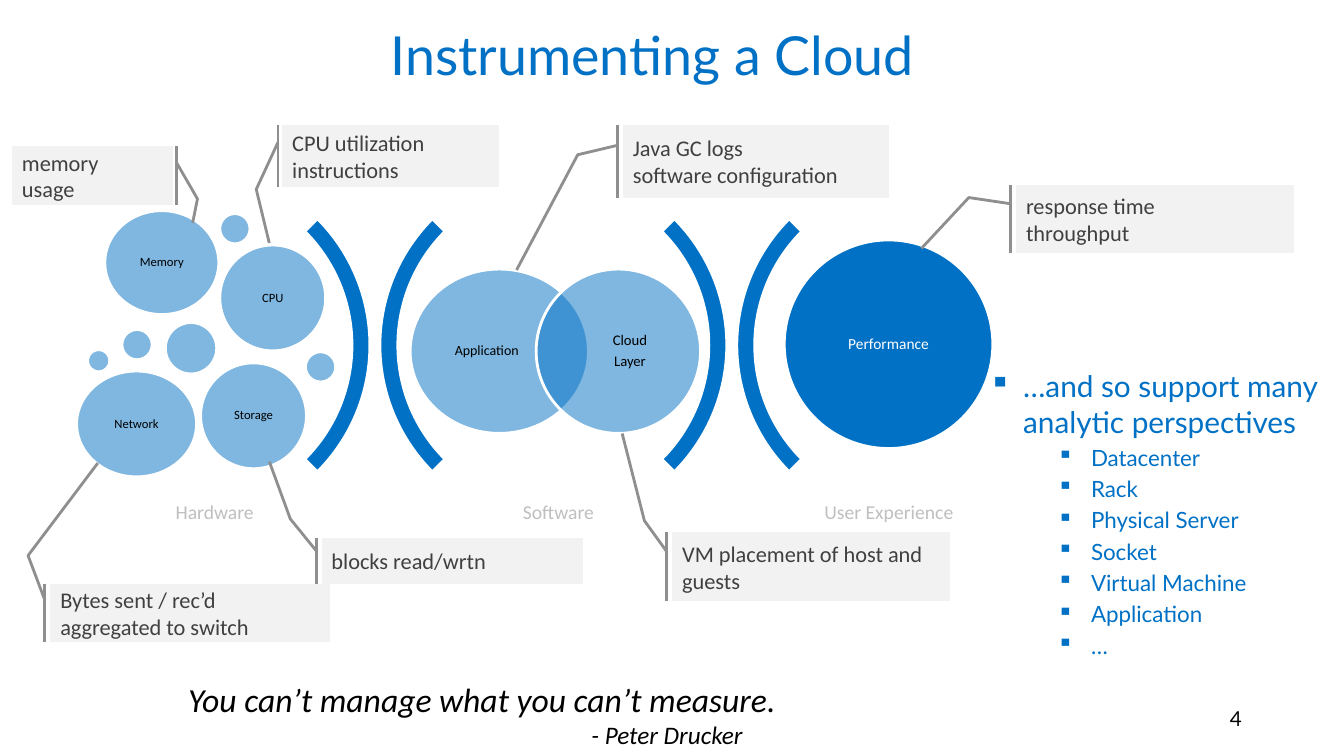
import pptx
import pptx.util
import pptx.dml.color
import pptx.enum.shapes
import pptx.enum.text
import pptx.oxml.ns
import lxml.etree

Pt = pptx.util.Pt
RGB = pptx.dml.color.RGBColor.from_string
SHAPE = pptx.enum.shapes.MSO_SHAPE
ALIGN = pptx.enum.text.PP_ALIGN
ANCHOR = pptx.enum.text.MSO_ANCHOR
qn = pptx.oxml.ns.qn

COLORS = {"blue": "0071C5", "white": "FFFFFF", "black": "000000", "caption": "BFBFBF",
          "panel": "F2F2F2", "leader": "8F8F8F", "note": "404040"}

presentation = pptx.Presentation()
presentation.slide_width, presentation.slide_height = Pt(960), Pt(540)
slide = presentation.slides.add_slide(presentation.slide_layouts[6])


def draw(kind, box, fill, line, alpha=None):
    """Add a preset shape with a flat fill and a 2 pt line."""
    shape = slide.shapes.add_shape(kind, *map(Pt, box))
    shape.shadow.inherit = False
    shape.fill.solid()
    shape.fill.fore_color.rgb = RGB(COLORS[fill])
    shape.line.color.rgb = RGB(COLORS[line])
    shape.line.width = Pt(2)
    if alpha:
        color = shape._element.spPr.find(qn("a:solidFill"))[0]
        lxml.etree.SubElement(color, qn("a:alpha")).set("val", str(alpha * 1000))
    return shape


def write(target, lines, size, color, font="Calibri", anchor=ANCHOR.MIDDLE, inset=None, **layout):
    """Fill a shape, or a new text box at a given place, with paragraphs."""
    shape = target
    if isinstance(target, tuple):
        shape = slide.shapes.add_textbox(*map(Pt, target))
    frame = shape.text_frame
    frame.word_wrap, frame.vertical_anchor = True, anchor
    if inset is not None:
        for side, margin in zip(("left", "top", "right", "bottom"), inset):
            setattr(frame, "margin_" + side, Pt(margin))
    frame.text = "\n".join(lines)
    for paragraph in frame.paragraphs:
        for name, value in layout.items():
            setattr(paragraph, name, value)
        for name, value in {"size": Pt(size), "name": font}.items():
            setattr(paragraph.runs[0].font, name, value)
        paragraph.runs[0].font.color.rgb = RGB(COLORS[color])
    return frame


# Arcs between the three stages
for left, rotation in ((8.6, 90), (271.4, 270), (263.5, 90), (526.3, 270)):
    arc = draw(SHAPE.BLOCK_ARC, (left, 118.8, 255.6, 255.6), "blue", "white")
    arc.rotation = rotation
    for index, value in enumerate((135, 189, 0.05)):
        arc.adjustments[index] = value

# Stage captions
for left, caption in ((56.2, "Hardware"), (301.7, "Software"), (537.8, "User Experience")):
    write((left, 341.3, 194.4, 51.1), [caption], 14, "caption", inset=[4.3] * 4,
          alignment=ALIGN.CENTER, line_spacing=0.9, space_after=Pt(4.9))

# Circles: left, top, width, height, label lines, label size, label shift
circles = [
    (293, 192.2, 127.4, 117.4, ["Application"], 10, -9),
    (383, 192.2, 117.4, 117.4, ["Cloud", "Layer"], 10.5, 8.3),
    (74.9, 150.5, 81.4, 74.2, ["Memory"], 9, 0),
    (87.1, 235.4, 21.6, 21.6, [], 0, 0),
    (157, 152.6, 21.6, 21.6, [], 0, 0),
    (157, 175, 75.6, 75.6, ["CPU"], 9, 0),
    (218.2, 251.3, 21.6, 21.6, [], 0, 0),
    (54.7, 265, 85.7, 75.6, ["Network"], 9, 0),
    (143.3, 259.2, 75.6, 75.6, ["Storage"], 9, 0),
    (118.1, 230.4, 36.7, 36.7, [], 0, 0),
    (62.6, 249.8, 15.8, 15.8, [], 0, 0),
    (560.2, 171.4, 149, 149, ["Performance"], 11, 0),
]
for left, top, width, height, lines, size, shift in circles:
    solid = lines == ["Performance"]
    draw(SHAPE.OVAL, (left, top, width, height), "blue", "white", None if solid else 50)
    if lines:
        label_box = (left + 0.15 * width + shift, top + 0.15 * height, 0.7 * width, 0.7 * height)
        write(label_box, lines, size, "white" if solid else "black", inset=[0] * 4,
              alignment=ALIGN.CENTER, line_spacing=0.9, space_after=Pt(0.35 * size))

# Title
write((106.6, 11.5, 718.6, 54.7), ["Instrumenting a Cloud"], 38.4, "blue", "Lato",
      alignment=ALIGN.CENTER)

# Bulleted perspectives
perspectives = ["…and so support many analytic perspectives", "Datacenter", "Rack",
                "Physical Server", "Socket", "Virtual Machine", "Application", "…"]
body = write((697, 257.8, 263.5, 231.1), perspectives, 16, "blue", "Lato", ANCHOR.TOP,
             [9.6, 4.8, 9.6, 4.8], space_before=Pt(3.2))
body.paragraphs[0].runs[0].font.size = Pt(21.3)
body.paragraphs[0].space_before = Pt(4.3)
for index, paragraph in enumerate(body.paragraphs):
    paragraph.level = min(index, 1)
    properties = paragraph._p.get_or_add_pPr()
    properties.set("marL", str(Pt(72.7 if index else 24.3)))
    properties.set("indent", str(Pt(-24.3)))
    bullet_color = lxml.etree.SubElement(properties, qn("a:buClr"))
    lxml.etree.SubElement(bullet_color, qn("a:srgbClr")).set("val", COLORS["blue"])
    lxml.etree.SubElement(properties, qn("a:buChar")).set("char", "▪")

# Metric callouts: box, bend and tip of the leader (y, x as parts of the box), lines
callouts = [
    ((725.8, 131.8, 198.7, 49), (0.19, -0.17, 0.93, -0.34), ["response time", "throughput"]),
    ((480.2, 380.2, 198.7, 49), (-0.17, -0.1, -1.44, -0.18), ["VM placement of host and guests"]),
    ((36, 416.9, 199.4, 41.8), (-0.48, -0.08, -2.06, 0.17),
     ["Bytes sent / rec’d", "aggregated to switch"]),
    ((445, 89.3, 190.1, 51.8), (0.41, -0.17, 2, -0.4), ["Java GC logs", "software configuration"]),
    ((201.6, 89.3, 154.8, 44.6), (1.03, -0.12, 1.89, -0.06), ["CPU utilization", "instructions"]),
    ((8.6, 104.4, 115.2, 41.8), (0.9, -0.15, 1.31, -0.12), ["memory", "usage"]),
    ((229.7, 384.5, 186.5, 32.4), (-0.43, -0.12, -1.69, -0.2), ["blocks read/wrtn"]),
]
for box, leader, lines in callouts:
    callout = draw(SHAPE.LINE_CALLOUT_2_ACCENT_BAR, box, "panel", "leader")
    for index, value in enumerate((0.28, -0.02) + leader):
        callout.adjustments[index] = value
    write(callout, lines, 16, "note", alignment=ALIGN.LEFT)
    if lines[0] == "memory":  # leader on the right-hand side
        callout.rotation = 180
        callout._element.spPr.find(qn("a:xfrm")).set("flipV", "1")

# Slide number and quotation
write((678.2, 500.4, 216, 28.8), ["4"], 14.7, "black", "Lato", ANCHOR.TOP, alignment=ALIGN.RIGHT)
quote = write((127.4, 481.7, 724.3, 58.3),
              ["You can’t manage what you can’t measure.", "- Peter Drucker"],
              24, "black", anchor=ANCHOR.TOP)
for paragraph in quote.paragraphs:
    paragraph.runs[0].font.italic = True
author = quote.paragraphs[1]
author.runs[0].font.size = Pt(18)
author._p.get_or_add_pPr().set("marL", str(Pt(288)))

presentation.save("out.pptx")
